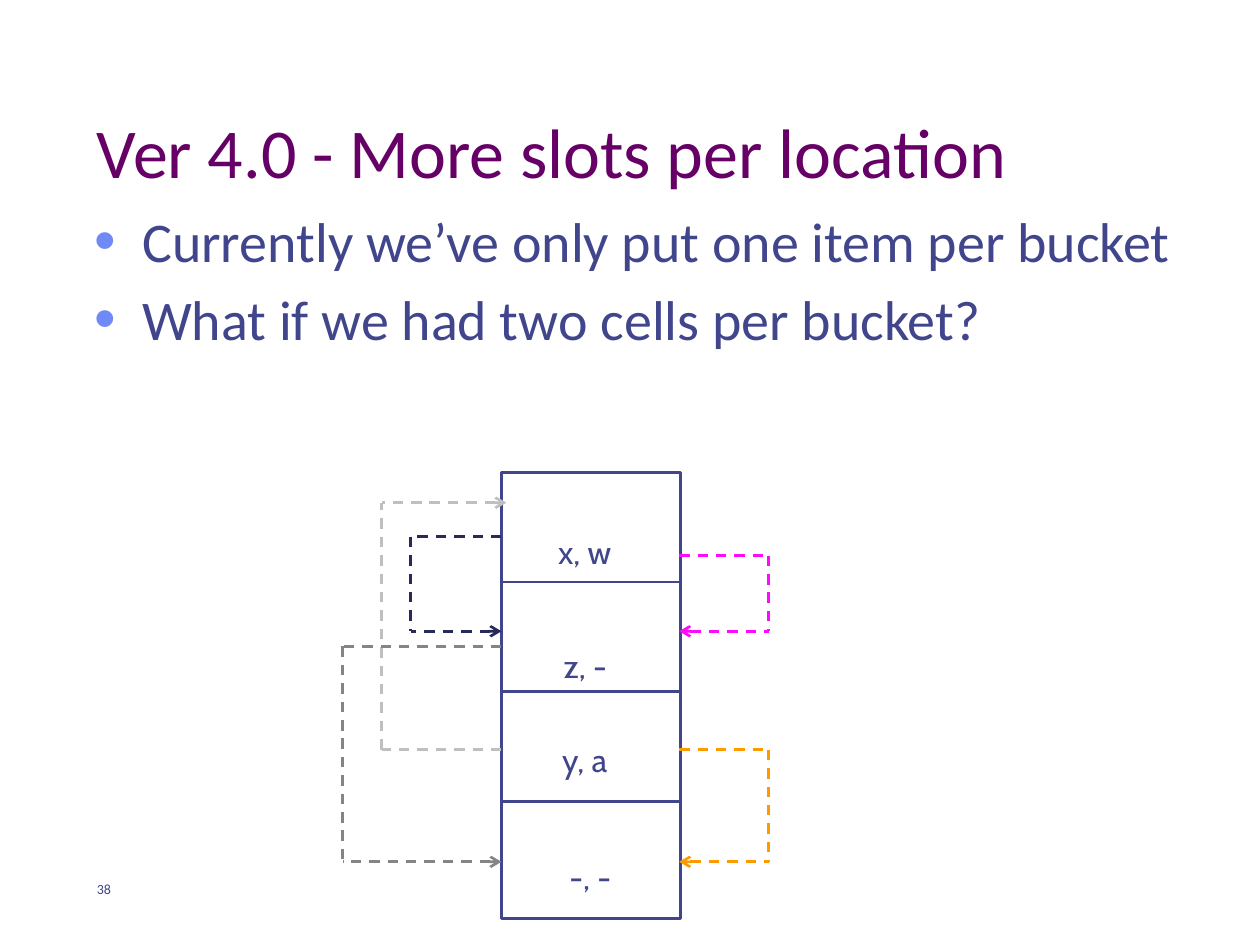
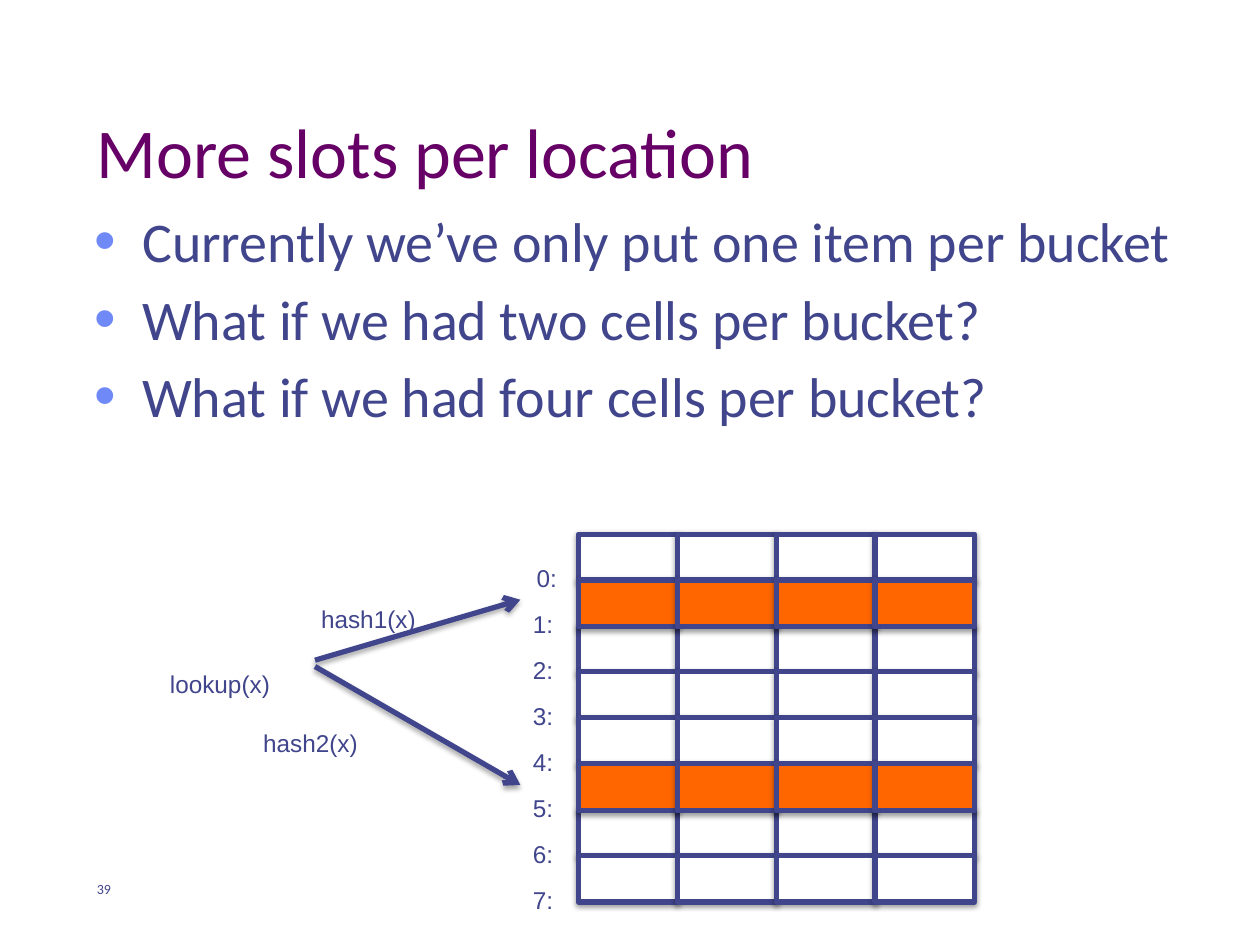
from lxml import etree
from pptx import Presentation
from pptx.dml.color import RGBColor
from pptx.enum.dml import MSO_LINE
from pptx.enum.shapes import MSO_CONNECTOR, MSO_SHAPE
from pptx.enum.text import MSO_ANCHOR, MSO_AUTO_SIZE, PP_ALIGN
from pptx.oxml.ns import qn
from pptx.util import Inches, Pt

PLUM = RGBColor(0x66, 0x00, 0x66)
INDIGO = RGBColor(0x40, 0x45, 0x8C)
NAVY = RGBColor(0x28, 0x2B, 0x59)
SKY = RGBColor(0x6F, 0x89, 0xF7)
WHITE = RGBColor(0xFF, 0xFF, 0xFF)
SILVER = RGBColor(0xBF, 0xBF, 0xBF)
GRAY = RGBColor(0x85, 0x85, 0x85)
MAGENTA = RGBColor(0xFF, 0x0A, 0xFF)
AMBER = RGBColor(0xFF, 0x99, 0x00)
ORANGE = RGBColor(0xFF, 0x66, 0x00)

BULLETS = [
    "Currently we’ve only put one item per bucket",
    "What if we had two cells per bucket?",
    "What if we had four cells per bucket?",
]


def add_xml(parent, tag, **attrs):
    child = etree.SubElement(parent, qn(tag))
    for name, value in attrs.items():
        child.set(name, str(value))
    return child


def set_shadow(sp, distance=0, opacity=0):
    """Give the shape a soft shadow straight below it, or none at distance 0."""
    effects = add_xml(sp._element.spPr, "a:effectLst")
    if distance:
        outer = add_xml(effects, "a:outerShdw", blurRad=Pt(3.1),
                        dist=Pt(distance), dir=90 * 60000, rotWithShape=0)
        color = add_xml(outer, "a:srgbClr", val="000000")
        add_xml(color, "a:alpha", val=opacity * 1000)


def set_bullet(p):
    pPr = p._p.get_or_add_pPr()
    pPr.set("marL", str(Inches(0.38)))
    pPr.set("indent", str(-Inches(0.38)))
    add_xml(add_xml(pPr, "a:buClr"), "a:srgbClr", val=SKY)
    add_xml(pPr, "a:buSzPct", val=110000)
    add_xml(pPr, "a:buFont", typeface="Arial")
    add_xml(pPr, "a:buChar", char="•")


class Deck:
    """Holds the presentation, its style and the slide being drawn."""

    def __init__(self):
        self.prs = Presentation()
        self.prs.slide_width = Inches(10)
        self.prs.slide_height = Inches(7.5)

    def new_slide(self, title, bullets, number):
        self.slide = self.prs.slides.add_slide(self.prs.slide_layouts[6])
        self.text(title, 0.67, 0.33, 8.75, 1.25, size=40, color=PLUM,
                  anchor=MSO_ANCHOR.BOTTOM)
        self.text(bullets, 0.65, 1.59, 9.02, 0.6 + 0.73 * (len(bullets) - 1),
                  size=32, bullet=True)
        self.text(str(number), 0.67, 6.67, 0.67, 0.5, size=8,
                  anchor=MSO_ANCHOR.BOTTOM)

    def text(self, text, x, y, w, h, size=24, font="Calibri", color=INDIGO,
             align=PP_ALIGN.LEFT, anchor=MSO_ANCHOR.TOP, wrap=True,
             bullet=False, lowered=False):
        """Place one paragraph, or one for each item of a list."""
        box = self.slide.shapes.add_textbox(
            Inches(x), Inches(y), Inches(w), Inches(h))
        tf = box.text_frame
        tf.word_wrap = wrap
        tf.vertical_anchor = anchor
        if lowered:
            tf.auto_size = MSO_AUTO_SIZE.SHAPE_TO_FIT_TEXT
        lines = [text] if isinstance(text, str) else text
        for i, line in enumerate(lines):
            p = tf.add_paragraph() if i else tf.paragraphs[0]
            p.alignment = align
            if bullet:
                p.space_before = Pt(6)
                set_bullet(p)
            r = p.add_run()
            r.text = line
            r.font.name = font
            r.font.size = Pt(size)
            r.font.color.rgb = color
            if lowered:
                r._r.get_or_add_rPr().set("baseline", "-25000")

    def slot(self, text, x, y, w):
        self.text(text, x, y, w, 0.46, size=32, font="Cabin", lowered=True,
                  align=PP_ALIGN.CENTER, anchor=MSO_ANCHOR.MIDDLE)

    def label(self, text, x, y, w):
        self.text(text, x, y, w, 0.4, font="Arial", wrap=False, lowered=True)

    def rect(self, x, y, w, h, fill=WHITE, width=3, shadow=True):
        sp = self.slide.shapes.add_shape(
            MSO_SHAPE.RECTANGLE, Inches(x), Inches(y), Inches(w), Inches(h))
        sp.fill.solid()
        sp.fill.fore_color.rgb = fill
        sp.line.color.rgb = INDIGO
        sp.line.width = Pt(width)
        if shadow:
            set_shadow(sp, 1.6, 38)
        else:
            sp.shadow.inherit = False

    def line(self, start, end, color=INDIGO, width=1.5, dashed=False,
             arrow=None, shadow=False):
        """Join two points; arrow is "a:headEnd" (start) or "a:tailEnd" (end)."""
        points = [Inches(v) for v in (*start, *end)]
        cn = self.slide.shapes.add_connector(MSO_CONNECTOR.STRAIGHT, *points)
        cn.line.color.rgb = color
        cn.line.width = Pt(width)
        if dashed:
            cn.line.dash_style = MSO_LINE.DASH
        if arrow:
            add_xml(cn.line._get_or_add_ln(), arrow, type="arrow")
        if shadow:
            set_shadow(cn, 1.8, 35)
        else:
            set_shadow(cn)

    def loop(self, edge, side, start_y, tip_y, color, tip_x=None):
        """Dashed detour from one bucket, out to side, and back to another."""
        tip = (tip_x or edge, tip_y)
        self.line((edge, start_y), (side, start_y), color, dashed=True)
        self.line((side, start_y), (side, tip_y), color, dashed=True)
        self.line(tip, (side, tip_y), color, dashed=True, arrow="a:headEnd")


def two_cells(deck):
    deck.new_slide("Ver 4.0 - More slots per location", BULLETS[:2], 38)
    left, right, top = 3.98, 5.39, 3.75
    deck.rect(left, top, 1.42, 3.54, width=2, shadow=False)
    for i in range(1, 4):
        y = top + i * 0.87
        deck.line((left, y), (right, y))

    for text, x, y, w in [("x, w", 4.13, 4, 1.02), ("z, -", 4.29, 4.9, 0.71),
                          ("y, a", 4.13, 5.65, 1.02), ("-, -", 4.33, 6.58, 0.71)]:
        deck.slot(text, x, y, w)

    deck.loop(left, 3.26, 4.26, 5.01, NAVY)
    deck.loop(left, 3.03, 5.95, 3.99, SILVER, tip_x=4.02)
    deck.loop(left, 2.72, 5.13, 6.84, GRAY)
    deck.loop(right, 6.1, 4.41, 5.01, MAGENTA)
    deck.loop(right, 6.1, 5.95, 6.84, AMBER)


def four_cells(deck):
    deck.new_slide("More slots per location", BULLETS, 39)
    rows, hashed_rows = range(8), (1, 5)
    row_tops = [4.24 + row * 2.55 / 7 for row in rows]
    plain_rows = [row for row in rows if row not in hashed_rows]
    for row in (*plain_rows, *hashed_rows):
        fill = ORANGE if row in hashed_rows else WHITE
        for col in range(4):
            deck.rect(4.59 + col * 0.785, row_tops[row], 0.79, 0.37, fill)
    for row in rows:
        deck.label(f"{row}:", 4.13 if row else 4.16, row_tops[row] - 0.04, 0.41)

    for start_y, end_y in [(5.24, 4.76), (5.29, 6.23)]:
        deck.line((2.5, start_y), (4.13, end_y), width=3,
                  arrow="a:tailEnd", shadow=True)
    deck.label("lookup(x)", 1.25, 5.04, 1.25)
    deck.label("hash1(x)", 2.45, 4.52, 1.14)
    deck.label("hash2(x)", 1.99, 5.51, 1.14)


def main():
    deck = Deck()
    two_cells(deck)
    four_cells(deck)
    deck.prs.save("out.pptx")


if __name__ == "__main__":
    main()
